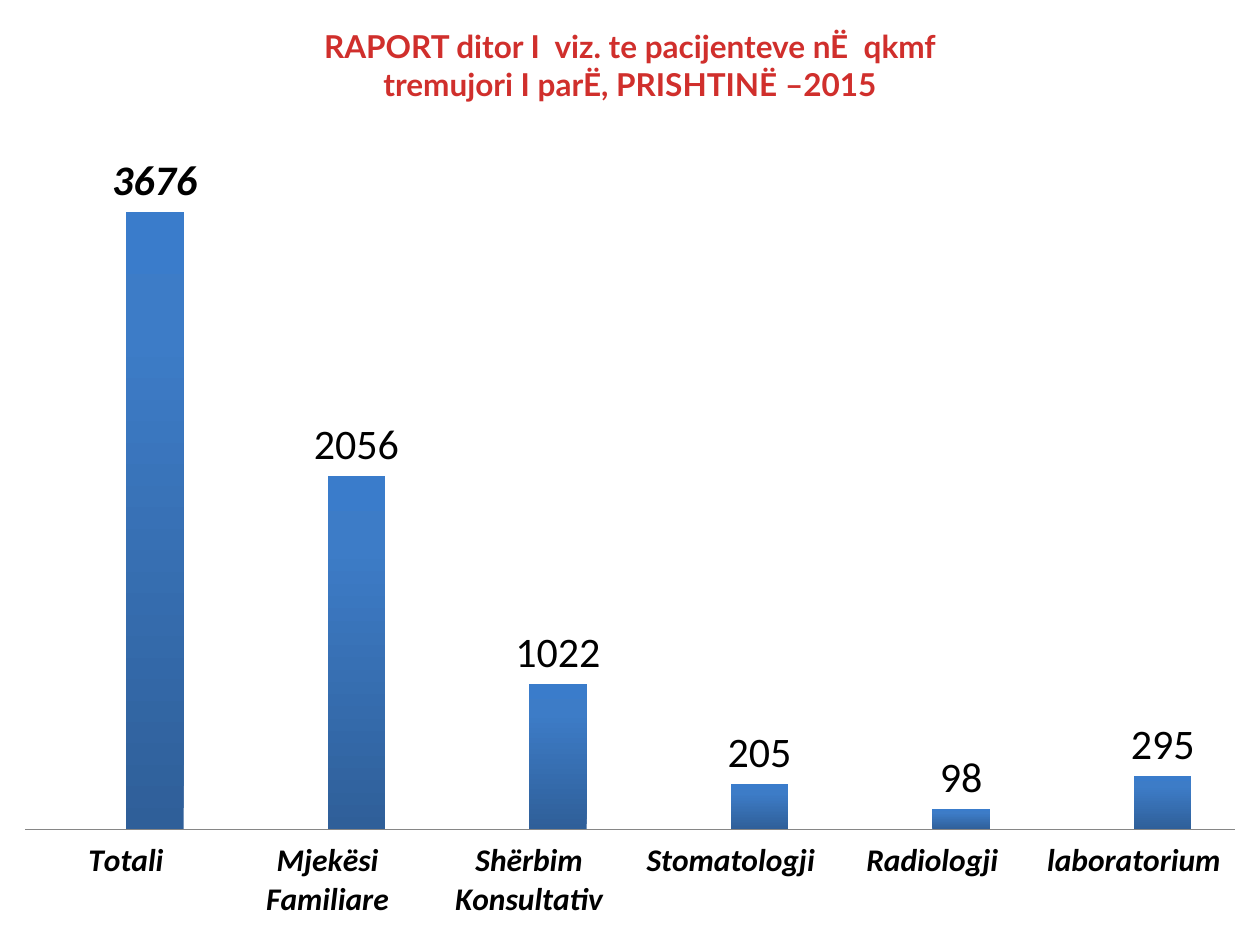
from copy import deepcopy
from dataclasses import dataclass

from lxml import etree
from pptx import Presentation
from pptx.chart.data import CategoryChartData
from pptx.dml.color import RGBColor
from pptx.enum.chart import XL_CHART_TYPE, XL_LABEL_POSITION, XL_TICK_LABEL_POSITION, XL_TICK_MARK
from pptx.enum.text import PP_ALIGN
from pptx.oxml.ns import qn
from pptx.util import Pt

COLUMN_CLUSTERED = XL_CHART_TYPE.COLUMN_CLUSTERED
OUTSIDE_END = XL_LABEL_POSITION.OUTSIDE_END
LOW = XL_TICK_LABEL_POSITION.LOW
NO_TICK = XL_TICK_MARK.NONE
CENTER = PP_ALIGN.CENTER


@dataclass(frozen=True)
class Theme:
    title_font: str = "Lato"
    chart_font: str = "Calibri"
    title_color: str = "D02F2C"
    text_color: str = "000000"
    axis_color: str = "868686"
    empty_series_color: str = "4F81BD"
    bar_gradient: tuple = ((0, "2F5F99"), (0.8, "3D7CC7"), (1, "3A7CCB"))
    title_size: int = 18
    category_size: int = 18
    label_size: int = 24
    chart_size: int = 10


@dataclass(frozen=True)
class Service:
    name: str
    bar_value: int
    label: str
    emphasized: bool = False


THEME = Theme()
SLIDE_WIDTH, SLIDE_HEIGHT = 720, 540
TITLE_LINES = (
    "RAPORT ditor I  viz. te pacijenteve nË  qkmf",
    "tremujori I parË, PRISHTINË –2015",
)
SERVICES = (
    Service("Totali", 4102, "3676", True),
    Service("Mjekësi Familiare", 2347, "2056"),
    Service("Shërbim Konsultativ", 965, "1022"),
    Service("Stomatologji", 299, "205"),
    Service("Radiologji", 136, "98"),
    Service("laboratorium", 355, "295"),
)
PLOT_AREA = {"x": 0.02, "y": 0.02, "w": 0.96, "h": 0.86}


def style_font(font, name: str, size: int, color: str, bold=False, italic=False) -> None:
    font.name = name
    font.size = Pt(size)
    font.color.rgb = RGBColor.from_string(color)
    font.bold = bold
    font.italic = italic


def add_title(slide) -> None:
    box = slide.shapes.add_textbox(Pt(0), Pt(12), Pt(SLIDE_WIDTH), Pt(51))
    text_frame = box.text_frame
    text_frame.word_wrap = True
    text_frame.text = "\n".join(TITLE_LINES)
    for paragraph in text_frame.paragraphs:
        paragraph.alignment = CENTER
        for run in paragraph.runs:
            style_font(run.font, THEME.title_font, THEME.title_size, THEME.title_color, bold=True)


def fill_bars(series) -> None:
    """Give the bars an upward gradient with every stop of the theme."""
    fill = series.format.fill
    fill.gradient()
    fill.gradient_angle = 90
    stop_list = series._element.find(".//" + qn("a:gsLst"))
    while len(stop_list) < len(THEME.bar_gradient):
        stop_list.append(deepcopy(stop_list[-1]))
    for stop, (position, color) in zip(fill.gradient_stops, THEME.bar_gradient):
        stop.position = position
        stop.color.rgb = RGBColor.from_string(color)


def label_bars(series) -> None:
    labels = series.data_labels
    labels.show_value = True
    labels.position = OUTSIDE_END
    style_font(labels.font, THEME.chart_font, THEME.label_size, THEME.text_color, bold=True)
    for index, service in enumerate(SERVICES):
        label = series.points[index].data_label
        label.text_frame.text = service.label
        label.position = OUTSIDE_END
        run = label.text_frame.paragraphs[0].runs[0]
        style_font(run.font, THEME.chart_font, THEME.label_size, THEME.text_color,
                   service.emphasized, service.emphasized)


def fix_plot_area(chart) -> None:
    """Pin the inner plot area to fractions of the chart frame."""
    plot_area = chart._chartSpace.find(".//" + qn("c:plotArea"))
    old_layout = plot_area.find(qn("c:layout"))
    if old_layout is not None:
        plot_area.remove(old_layout)
    layout = etree.Element(qn("c:layout"))
    manual = etree.SubElement(layout, qn("c:manualLayout"))
    settings = {"layoutTarget": "inner", "xMode": "edge", "yMode": "edge", **PLOT_AREA}
    for name, value in settings.items():
        etree.SubElement(manual, qn(f"c:{name}")).set("val", str(value))
    plot_area.insert(0, layout)


def add_visit_chart(slide) -> None:
    data = CategoryChartData()
    data.categories = [service.name for service in SERVICES]
    data.add_series("Series 1", [None] * len(SERVICES))
    data.add_series("Series 2", [service.bar_value for service in SERVICES])
    frame = slide.shapes.add_chart(
        COLUMN_CLUSTERED, Pt(0), Pt(78), Pt(SLIDE_WIDTH), Pt(450), data)
    chart = frame.chart
    chart.has_title = False
    chart.has_legend = False
    style_font(chart.font, THEME.chart_font, THEME.chart_size, THEME.text_color)

    plot = chart.plots[0]
    plot.gap_width = 150
    plot.overlap = 0
    plot.vary_by_categories = False
    empty_series, visit_series = plot.series
    empty_series.format.fill.solid()
    empty_series.format.fill.fore_color.rgb = RGBColor.from_string(THEME.empty_series_color)
    fill_bars(visit_series)
    label_bars(visit_series)

    value_axis = chart.value_axis
    value_axis.minimum_scale = 0
    value_axis.maximum_scale = 4500
    value_axis.has_major_gridlines = False
    value_axis.visible = False

    category_axis = chart.category_axis
    category_axis.major_tick_mark = NO_TICK
    category_axis.minor_tick_mark = NO_TICK
    category_axis.tick_label_position = LOW
    category_axis.format.line.color.rgb = RGBColor.from_string(THEME.axis_color)
    category_axis.format.line.width = Pt(0.75)
    style_font(category_axis.tick_labels.font, THEME.chart_font, THEME.category_size,
               THEME.text_color, bold=True, italic=True)
    fix_plot_area(chart)


def main() -> None:
    presentation = Presentation()
    presentation.slide_width = Pt(SLIDE_WIDTH)
    presentation.slide_height = Pt(SLIDE_HEIGHT)
    slide = presentation.slides.add_slide(presentation.slide_layouts[6])
    add_visit_chart(slide)
    add_title(slide)
    presentation.save("out.pptx")


if __name__ == "__main__":
    main()
